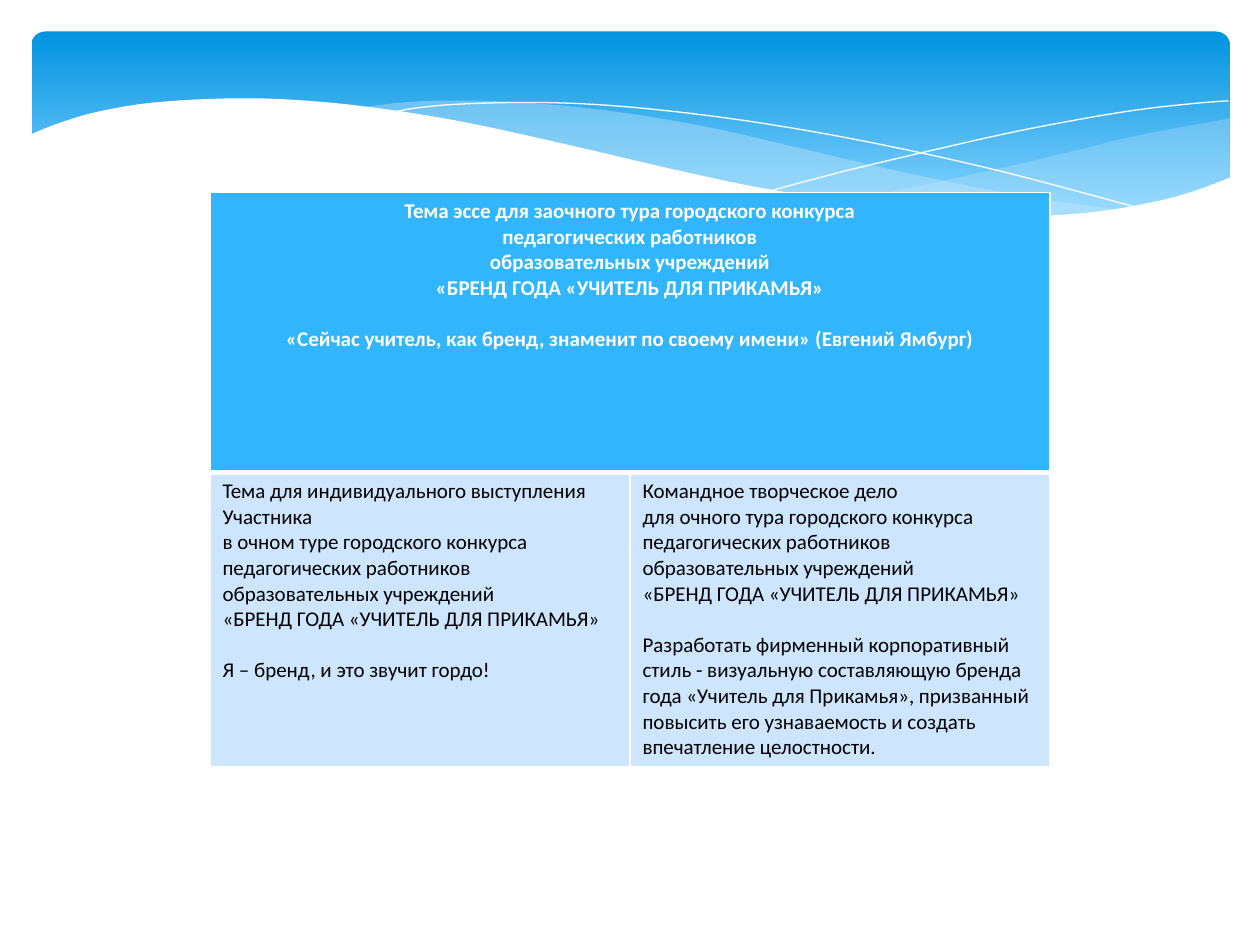
from lxml.etree import SubElement
from pptx import Presentation
from pptx.dml.color import RGBColor
from pptx.enum.shapes import MSO_SHAPE
from pptx.enum.text import PP_ALIGN
from pptx.oxml.ns import qn
from pptx.util import Pt

# Table content: each paragraph is (text, has a line gap above)
CONTEST = "«БРЕНД ГОДА «УЧИТЕЛЬ ДЛЯ ПРИКАМЬЯ»"
ESSAY = [
    ("Тема эссе для заочного тура городского конкурса", False),
    ("педагогических работников", False),
    ("образовательных учреждений", False),
    (CONTEST, False),
    ("«Сейчас учитель, как бренд, знаменит по своему имени» (Евгений Ямбург)", True),
]
SPEECH = [
    ("Тема для индивидуального выступления Участника", False),
    ("в очном туре городского конкурса педагогических работников "
     "образовательных учреждений", False),
    (CONTEST, False),
    ("Я – бренд, и это звучит гордо!", True),
]
TEAMWORK = [
    ("Командное творческое дело", False),
    ("для очного тура городского конкурса", False),
    ("педагогических работников", False),
    ("образовательных учреждений", False),
    (CONTEST, False),
    ("Разработать фирменный корпоративный стиль - визуальную составляющую бренда "
     "года «Учитель для Прикамья», призванный повысить его узнаваемость и создать "
     "впечатление целостности.", True),
]
TABLE_LEFT, TABLE_TOP, COLUMN_WIDTH = 120, 110, 240
ROW_HEIGHTS = [160, 168]
LINE_GAP = 14.65

# Banner curves: key points in points, smoothed when drawn
RIGHT_TOP = [(702.7, 67.7), (673, 73), (641.5, 79.3), (620, 84.7), (579.6, 94.3),
             (542, 102.6), (508, 109.6), (476, 115.2)]
RIGHT_BOTTOM = [(476, 115.2), (507.6, 119), (545, 122.4), (578, 124), (607.7, 123.2),
                (634, 120.5), (663, 115), (683, 109.3), (702.7, 101.5)]
MIDDLE_TOP = [(643, 120.3), (602.6, 114.8), (558, 107), (508, 96.6), (453, 83.7),
              (409.7, 73.7), (370, 66.5), (334.8, 61.7), (302.4, 58.8),
              (273.6, 57.6), (247.7, 57.6), (225.4, 59), (206, 61.7)]
MIDDLE_BOTTOM = [(206, 61.7), (246, 67.4), (291, 76), (323, 83.2), (381.6, 97),
                 (432.7, 107.8), (478.8, 115.6), (520, 120.9), (556.6, 123.8),
                 (589, 124.6), (617, 123.4), (643, 120.3)]
FALLING_LINE = [(222.5, 64.8), (236, 62), (261.4, 59.6), (299.5, 58.6), (337.7, 59.6),
                (383.8, 63.6), (437.8, 70.8), (500.4, 82), (572.4, 98), (653, 119.5)]
RISING_LINE = [(441.4, 108.7), (483.8, 97.5), (538.6, 84.5), (580.3, 75.2),
               (623.5, 67), (655, 62.1), (684.7, 58.9), (702, 57.6)]
WHITE_EDGE = [(16.6, 77.2), (33, 70.6), (54.7, 64.1), (85.7, 58.8), (127.4, 56.3),
              (165.6, 56.9), (210, 61), (262.8, 69.3), (321.8, 82.1), (381, 95.9),
              (434, 107.2), (495.4, 116.9), (548, 122.2), (592.6, 123.4),
              (630, 120.5), (662.4, 114.7), (684, 108.6), (703.4, 101.2)]
WHITE_BASE = [(703.4, 161), (16.6, 161)]


def color(value):
    return RGBColor.from_string(value)


def smooth(points, steps=5):
    """Catmull-Rom curve through the points."""
    padded = [points[0], *points, points[-1]]
    curve = [points[0]]
    for a, b, c, d in zip(padded, padded[1:], padded[2:], padded[3:]):
        for step in range(1, steps + 1):
            t = step / steps
            curve.append(tuple(
                q + t * (r - p) / 2 + t**2 * (2 * p - 5 * q + 4 * r - s) / 2
                + t**3 * (3 * q - p - 3 * r + s) / 2
                for p, q, r, s in zip(a, b, c, d)))
    return curve


def add_outline(points, fill=None, alpha=None, line=None):
    points = [(Pt(x), Pt(y)) for x, y in points]
    builder = slide.shapes.build_freeform(*points[0])
    builder.add_line_segments(points[1:], close=fill is not None)
    outline = builder.convert_to_shape()
    outline.shadow.inherit = False
    if fill:
        outline.fill.solid()
        outline.fill.fore_color.rgb = color(fill)
    else:
        outline.fill.background()
    if alpha:
        fill_color = outline.fill._xPr.find(".//" + qn("a:srgbClr"))
        SubElement(fill_color, qn("a:alpha"), val=str(alpha * 1000))
    if line:
        outline.line.color.rgb = color(line)
        outline.line.width = Pt(0)
    else:
        outline.line.fill.background()


def write(paragraph, text, size=12, font="Calibri", ink="000000", bold=False,
          align=PP_ALIGN.LEFT, before=0):
    paragraph.alignment = align
    paragraph.space_before = Pt(before)
    run = paragraph.add_run()
    run.text = text
    run.font.size, run.font.name, run.font.bold = Pt(size), font, bold
    run.font.color.rgb = color(ink)


def set_borders(cell, bottom=1, top=1):
    properties = cell._tc.get_or_add_tcPr()
    widths = {"a:lnL": 1, "a:lnR": 1, "a:lnT": top, "a:lnB": bottom}
    for position, (side, width) in enumerate(widths.items()):
        border = properties.makeelement(qn(side), {"w": str(Pt(width))})
        SubElement(SubElement(border, qn("a:solidFill")), qn("a:srgbClr"), val="FFFFFF")
        properties.insert(position, border)


def fill_cell(cell, content, fill, **text_format):
    cell.fill.solid()
    cell.fill.fore_color.rgb = color(fill)
    frame = cell.text_frame
    for index, (text, gap) in enumerate(content):
        paragraph = frame.add_paragraph() if index else frame.paragraphs[0]
        write(paragraph, text, before=LINE_GAP if gap else 0, **text_format)


presentation = Presentation()
presentation.slide_width, presentation.slide_height = Pt(720), Pt(540)
slide = presentation.slides.add_slide(presentation.slide_layouts[6])

# Blue banner
banner = slide.shapes.add_shape(MSO_SHAPE.ROUNDED_RECTANGLE,
                                Pt(18), Pt(18), Pt(684.7), Pt(112.3))
banner.adjustments[0] = 0.07
banner.shadow.inherit = False
banner.line.fill.background()
banner.fill.gradient()
banner.fill.gradient_angle = 270
for stop, (place, shade) in zip(banner.fill.gradient_stops,
                                [(0, "0293E0"), (0.9, "83D3FE")]):
    stop.position = place
    stop.color.rgb = color(shade)

# Waves over the banner
add_outline(smooth(RIGHT_TOP) + smooth(RIGHT_BOTTOM), fill="C6E7FC", alpha=29)
add_outline(smooth(MIDDLE_TOP) + smooth(MIDDLE_BOTTOM), fill="C6E7FC", alpha=40)
for thin_line in (FALLING_LINE, RISING_LINE):
    add_outline(smooth(thin_line), line="FFFFFF")
add_outline(smooth(WHITE_EDGE) + WHITE_BASE, fill="FFFFFF")

# Topics table
topics = slide.shapes.add_table(2, 2, Pt(TABLE_LEFT), Pt(TABLE_TOP),
                                Pt(2 * COLUMN_WIDTH), Pt(sum(ROW_HEIGHTS))).table
for row, height in zip(topics.rows, ROW_HEIGHTS):
    row.height = Pt(height)
topics.cell(0, 0).merge(topics.cell(0, 1))
fill_cell(topics.cell(0, 0), ESSAY, "31B6FD", ink="FFFFFF", bold=True,
          align=PP_ALIGN.CENTER)
for column, content in enumerate([SPEECH, TEAMWORK]):
    fill_cell(topics.cell(1, column), content, "CEE5FE")
    set_borders(topics.cell(0, column), bottom=3)
    set_borders(topics.cell(1, column), top=3)

presentation.save("out.pptx")
